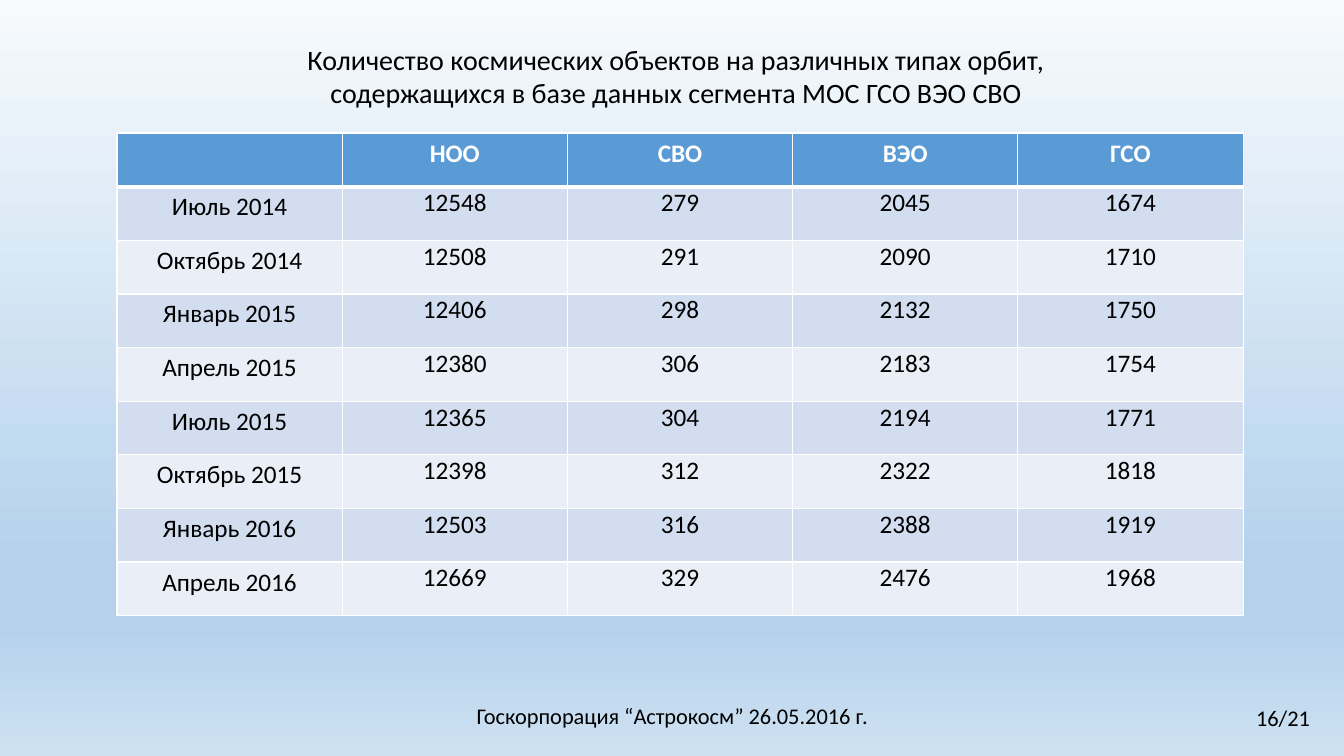
from dataclasses import dataclass

from lxml import etree
from pptx import Presentation
from pptx.dml.color import RGBColor
from pptx.enum.text import MSO_ANCHOR, MSO_AUTO_SIZE, PP_ALIGN
from pptx.oxml.ns import qn
from pptx.slide import Slide
from pptx.table import _Cell
from pptx.text.text import TextFrame
from pptx.util import Inches, Length, Pt

CENTER = PP_ALIGN.CENTER
TOP = MSO_ANCHOR.TOP
GROW = MSO_AUTO_SIZE.SHAPE_TO_FIT_TEXT

BLACK = RGBColor(0x00, 0x00, 0x00)
WHITE = RGBColor(0xFF, 0xFF, 0xFF)
HEADER_BLUE = RGBColor(0x5B, 0x9B, 0xD5)
BANDS = (RGBColor(0xD2, 0xDE, 0xEF), RGBColor(0xEA, 0xEF, 0xF7))
SKY_STOPS = (
    (0, RGBColor(0xF7, 0xFA, 0xFD)),
    (74, RGBColor(0xB5, 0xD2, 0xEC)),
    (83, RGBColor(0xB5, 0xD2, 0xEC)),
    (100, RGBColor(0xCE, 0xE1, 0xF2)),
)

FONT = "Calibri"
SLIDE_WIDTH, SLIDE_HEIGHT = Inches(13.33), Inches(7.5)
TITLE_ONLY = 5
THIN, THICK = Pt(1), Pt(3)
NUMBER_MARGINS = {
    "margin_left": Inches(0.01),
    "margin_top": Inches(0.01),
    "margin_right": Inches(0.01),
    "margin_bottom": 0,
}

TITLE = (
    "Количество космических объектов на различных типах орбит,\v"
    "содержащихся в базе данных сегмента МОС ГСО ВЭО СВО"
)
ORBITS = ("", "НОО", "СВО", "ВЭО", "ГСО")
OBJECT_COUNTS = (
    ("Июль 2014", 12548, 279, 2045, 1674),
    ("Октябрь 2014", 12508, 291, 2090, 1710),
    ("Январь 2015", 12406, 298, 2132, 1750),
    ("Апрель 2015", 12380, 306, 2183, 1754),
    ("Июль 2015", 12365, 304, 2194, 1771),
    ("Октябрь 2015", 12398, 312, 2322, 1818),
    ("Январь 2016", 12503, 316, 2388, 1919),
    ("Апрель 2016", 12669, 329, 2476, 1968),
)


@dataclass(frozen=True)
class Area:
    """A rectangle in percent of the slide's width and height."""

    left: float
    top: float
    width: float
    height: float

    def lengths(self) -> dict[str, int]:
        return {
            "left": round(SLIDE_WIDTH * self.left / 100),
            "top": round(SLIDE_HEIGHT * self.top / 100),
            "width": round(SLIDE_WIDTH * self.width / 100),
            "height": round(SLIDE_HEIGHT * self.height / 100),
        }


@dataclass(frozen=True)
class FooterNote:
    text: str
    area: Area


TITLE_AREA = Area(4.88, 4.93, 90.85, 10.27)
TABLE_AREA = Area(8.7, 17.6, 83.8, 63.87)
FOOTER_NOTES = (
    FooterNote("Госкорпорация “Астрокосм” 26.05.2016 г.", Area(34.58, 92.27, 30.91, 4.93)),
    FooterNote("16/21", Area(92.5, 92.53, 5.93, 4.93)),
)


def apply_format(target: object, values: dict[str, object]) -> None:
    for attribute, value in values.items():
        setattr(target, attribute, value)


def write_centered(
    frame: TextFrame, text: str, size: int, color: RGBColor = BLACK, bold: bool = False
) -> None:
    frame.text = text
    for paragraph in frame.paragraphs:
        paragraph.alignment = CENTER
        for run in paragraph.runs:
            apply_format(run.font, {"name": FONT, "size": Pt(size), "bold": bold})
            run.font.color.rgb = color


def paint_sky(slide: Slide) -> None:
    """Fill the background with the four-stop vertical gradient."""
    fill = slide.background.fill
    fill.gradient()
    fill.gradient_angle = 270
    stop_list = next(slide.element.iter(qn("a:gsLst")))
    for old_stop in list(stop_list):
        stop_list.remove(old_stop)
    for percent, color in SKY_STOPS:
        stop = etree.SubElement(stop_list, qn("a:gs"), pos=str(percent * 1000))
        etree.SubElement(stop, qn("a:srgbClr"), val=str(color))


def set_borders(cell: _Cell, top: Length, bottom: Length) -> None:
    properties = cell._tc.get_or_add_tcPr()
    sides = {"a:lnL": THIN, "a:lnR": THIN, "a:lnT": top, "a:lnB": bottom}
    for position, (tag, width) in enumerate(sides.items()):
        line = etree.Element(qn(tag), w=str(int(width)))
        solid = etree.SubElement(line, qn("a:solidFill"))
        etree.SubElement(solid, qn("a:srgbClr"), val=str(WHITE))
        properties.insert(position, line)


def add_title(slide: Slide) -> None:
    title = slide.shapes.title
    apply_format(title, TITLE_AREA.lengths())
    apply_format(
        title.text_frame,
        {"word_wrap": True, "auto_size": GROW, "vertical_anchor": TOP},
    )
    write_centered(title.text_frame, TITLE, 20)


def add_footer_note(slide: Slide, note: FooterNote) -> None:
    frame = slide.shapes.add_textbox(**note.area.lengths()).text_frame
    apply_format(frame, {"word_wrap": False, "auto_size": GROW})
    write_centered(frame, note.text, 16)


def add_orbit_table(slide: Slide) -> None:
    rows = (ORBITS, *OBJECT_COUNTS)
    table = slide.shapes.add_table(
        len(rows), len(ORBITS), **TABLE_AREA.lengths()
    ).table
    apply_format(table, {"first_row": False, "horz_banding": False})
    for row_index, row in enumerate(rows):
        is_header = row_index == 0
        for column_index, value in enumerate(row):
            cell = table.cell(row_index, column_index)
            cell.fill.solid()
            cell.fill.fore_color.rgb = (
                HEADER_BLUE if is_header else BANDS[(row_index - 1) % 2]
            )
            set_borders(
                cell,
                top=THICK if row_index == 1 else THIN,
                bottom=THICK if is_header else THIN,
            )
            if not is_header and column_index > 0:
                apply_format(cell, NUMBER_MARGINS)
            write_centered(
                cell.text_frame, str(value), 18, WHITE if is_header else BLACK, is_header
            )


def main() -> None:
    presentation = Presentation()
    apply_format(
        presentation, {"slide_width": SLIDE_WIDTH, "slide_height": SLIDE_HEIGHT}
    )
    slide = presentation.slides.add_slide(presentation.slide_layouts[TITLE_ONLY])
    paint_sky(slide)
    for note in FOOTER_NOTES:
        add_footer_note(slide, note)
    add_title(slide)
    add_orbit_table(slide)
    presentation.save("out.pptx")


if __name__ == "__main__":
    main()
